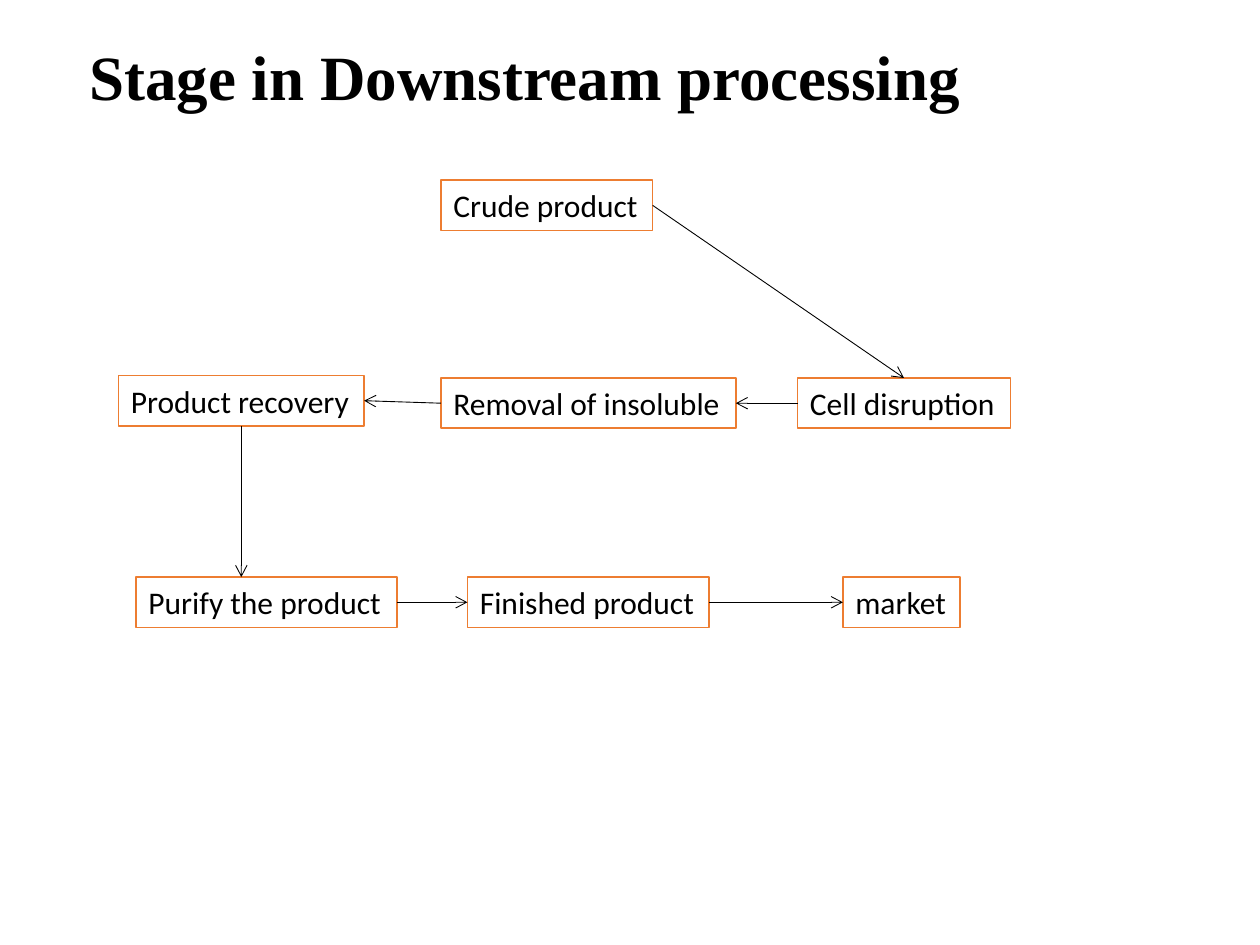
"""Build the slide on the stages of downstream processing."""
from lxml.etree import SubElement
from pptx import Presentation
from pptx.dml.color import RGBColor
from pptx.enum.shapes import MSO_CONNECTOR, MSO_SHAPE
from pptx.enum.text import MSO_ANCHOR, MSO_AUTO_SIZE, PP_ALIGN
from pptx.oxml.ns import qn
from pptx.util import Inches, Pt

BLACK = RGBColor(0x00, 0x00, 0x00)
WHITE = RGBColor(0xFF, 0xFF, 0xFF)
ORANGE = RGBColor(0xED, 0x7D, 0x31)
TOP, LEFT, BOTTOM, RIGHT = range(4)
HIGH = 0.4


def write(shape, text, font, size, bold=False):
    frame = shape.text_frame
    frame.word_wrap = False
    frame.auto_size = MSO_AUTO_SIZE.SHAPE_TO_FIT_TEXT
    frame.vertical_anchor = MSO_ANCHOR.TOP
    para = frame.paragraphs[0]
    para.alignment = PP_ALIGN.LEFT
    run = para.add_run()
    run.text = text
    run.font.name = font
    run.font.size = Pt(size)
    run.font.bold = bold
    run.font.color.rgb = BLACK


deck = Presentation()
deck.slide_width = Inches(10)
deck.slide_height = Inches(7.5)
slide = deck.slides.add_slide(deck.slide_layouts[6])
shapes = slide.shapes

title = shapes.add_textbox(Inches(0.61), Inches(0.25), Inches(7.18), Inches(0.71))
write(title, "Stage in Downstream processing", "Times New Roman", 36, True)

stages = [
    ("Crude product", 3.5, 1.43, 1.68),
    ("Cell disruption", 6.33, 3, 1.69),
    ("Removal of insoluble", 3.5, 3, 2.34),
    ("Product recovery", 0.94, 2.98, 1.95),
    ("Purify the product", 1.08, 4.58, 2.07),
    ("Finished product", 3.71, 4.58, 1.92),
    ("market", 6.69, 4.58, 0.93),
]
boxes = []
for text, left, top, width in stages:
    box = shapes.add_shape(
        MSO_SHAPE.RECTANGLE, Inches(left), Inches(top), Inches(width), Inches(HIGH)
    )
    box.shadow.inherit = False
    box.fill.solid()
    box.fill.fore_color.rgb = WHITE
    box.line.color.rgb = ORANGE
    box.line.width = Pt(1)
    write(box, text, "Calibri", 18)
    boxes.append(box)

sides = [
    (RIGHT, TOP),
    (LEFT, RIGHT),
    (LEFT, RIGHT),
    (BOTTOM, None),
    (RIGHT, LEFT),
    (RIGHT, LEFT),
]
for start, end, (exit, entry) in zip(boxes, boxes[1:], sides):
    drop = start.left + start.width // 2
    arrow = shapes.add_connector(MSO_CONNECTOR.STRAIGHT, drop, start.top, drop, end.top)
    arrow.begin_connect(start, exit)
    if entry is not None:
        arrow.end_connect(end, entry)
    arrow.line.color.rgb = BLACK
    arrow.line.width = Pt(0.5)
    SubElement(arrow.line._get_or_add_ln(), qn("a:tailEnd"), type="arrow")
    SubElement(arrow._element.spPr, qn("a:effectLst"))

deck.save("out.pptx")
